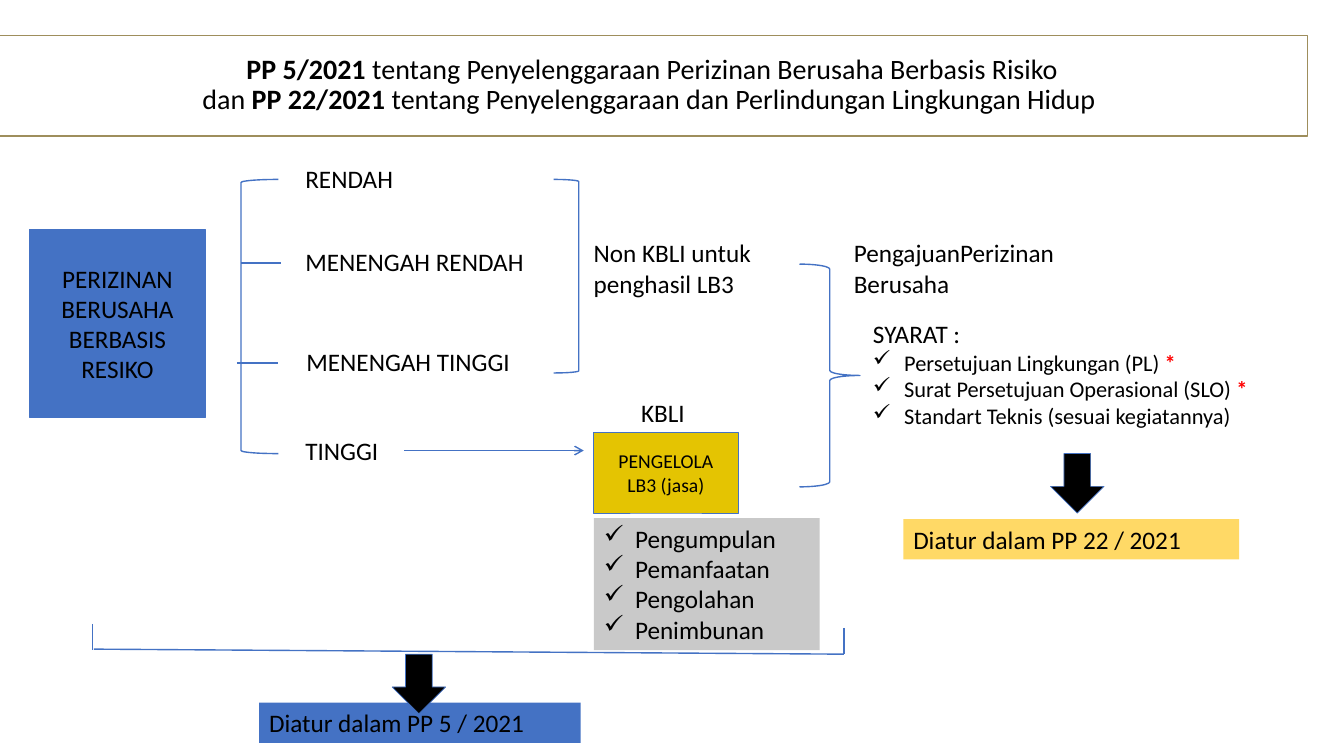
import pptx
import pptx.util
import pptx.dml.color
import pptx.enum.shapes
import pptx.enum.text
import pptx.oxml.ns
from lxml import etree

Inches = pptx.util.Inches
Pt = pptx.util.Pt
RGB = pptx.dml.color.RGBColor.from_string
SHAPE = pptx.enum.shapes.MSO_SHAPE
ALIGN = pptx.enum.text.PP_ALIGN
ANCHOR = pptx.enum.text.MSO_ANCHOR
qn = pptx.oxml.ns.qn

THEME = {
    "font": "Calibri", "title": 20, "body": 18, "list": 16, "small": 14,
    "ink": "000000", "blue": "4472C4", "red": "FF0000", "olive": "9E8E5C",
    "gold": "E4C402", "grey": "C9C9C9", "yellow": "FFD966",
}

deck = pptx.Presentation()
deck.slide_width, deck.slide_height = Inches(13.33), Inches(7.5)
page = deck.slides.add_slide(deck.slide_layouts[6])


def add_box(place, lines=(), kind=SHAPE.RECTANGLE, fill=None, line=None, weight=0.5,
            size="body", centred=False, bulleted=False):
    box = page.shapes.add_shape(kind, *map(Inches, place))
    box.shadow.inherit = False
    if fill:
        box.fill.solid()
        box.fill.fore_color.rgb = RGB(THEME[fill])
    else:
        box.fill.background()
    if line:
        box.line.color.rgb = RGB(THEME[line])
        box.line.width = Pt(weight)
    else:
        box.line.fill.background()
    frame = box.text_frame
    frame.word_wrap = True
    frame.vertical_anchor = ANCHOR.MIDDLE if centred else ANCHOR.TOP
    for index, spans in enumerate(lines):
        para = frame.paragraphs[0] if index == 0 else frame.add_paragraph()
        para.alignment = ALIGN.CENTER if centred else ALIGN.LEFT
        for text, style in spans:
            if text == "\n":
                para.add_line_break()
                continue
            span = para.add_run()
            span.text = text
            span.font.name = THEME["font"]
            span.font.size = Pt(THEME[style.get("size", size)])
            span.font.bold = style.get("bold", False)
            span.font.color.rgb = RGB(THEME[style.get("color", "ink")])
        if bulleted and text != "SYARAT :":
            settings = para._p.get_or_add_pPr()
            settings.set("marL", str(Inches(0.31)))
            settings.set("indent", str(-Inches(0.31)))
            etree.SubElement(settings, qn("a:buChar")).set("char", "✓")
    return box


def add_line(start_x, start_y, end_x, end_y, arrow=False):
    line = page.shapes.add_connector(
        pptx.enum.shapes.MSO_CONNECTOR.STRAIGHT,
        Inches(start_x), Inches(start_y), Inches(end_x), Inches(end_y))
    line.line.color.rgb = RGB(THEME["blue"])
    line.line.width = Pt(1)
    if arrow:
        etree.SubElement(line.line._get_or_add_ln(), qn("a:tailEnd")).set("type", "arrow")
    etree.SubElement(line._element.spPr, qn("a:effectLst"))


bold = {"bold": True}
star = ("*", {"bold": True, "color": "red"})

title = add_box((-0.03, 0.35, 13, 1), [[
    ("PP 5/2021 ", bold),
    ("tentang Penyelenggaraan Perizinan Berusaha Berbasis Risiko", {}),
    ("\n", {}),
    ("dan ", {}),
    ("PP 22/2021 ", bold),
    ("tentang Penyelenggaraan dan Perlindungan Lingkungan Hidup ", {}),
]], line="olive", weight=0.75, size="title", centred=True)
title.text_frame.paragraphs[0].line_spacing = 0.9

add_box((0.29, 2.28, 1.75, 1.86), [[("PERIZINAN BERUSAHA BERBASIS RESIKO", {})]],
        fill="blue", line="blue", centred=True)

for kind, place in [
    (SHAPE.LEFT_BRACKET, (2.39, 1.78, 0.37, 2.72)),
    (SHAPE.RIGHT_BRACKET, (5.49, 1.78, 0.25, 1.92)),
    (SHAPE.RIGHT_BRACE, (7.93, 2.62, 0.6, 2.21)),
]:
    add_box(place, kind=kind, line="blue", weight=1)

add_line(2.39, 2.61, 2.79, 2.61)
add_line(2.35, 3.6, 2.76, 3.6)
add_line(4.01, 4.47, 5.79, 4.47, arrow=True)

for text, place in [
    ("RENDAH", (2.93, 1.57, 1.22, 0.4)),
    ("MENENGAH RENDAH", (2.93, 2.39, 2.75, 0.4)),
    ("MENENGAH TINGGI", (2.94, 3.39, 2.58, 0.4)),
    ("TINGGI", (2.93, 4.27, 1.05, 0.4)),
    ("KBLI", (6.26, 3.89, 0.67, 0.4)),
    ("Non KBLI untuk penghasil LB3", (5.79, 2.31, 2.47, 0.71)),
    ("PengajuanPerizinan Berusaha", (8.37, 2.31, 2.96, 0.71)),
]:
    add_box(place, [[(text, {})]])

add_box((5.89, 4.29, 1.43, 0.8), [[("PENGELOLA LB3 (jasa)", {})]],
        fill="gold", line="blue", size="small", centred=True)

services = ["Pengumpulan", "Pemanfaatan", "Pengolahan", "Penimbunan"]
add_box((5.89, 5.14, 2.24, 1.31), [[(service, {})] for service in services],
        fill="grey", bulleted=True)

add_box((8.56, 3.11, 4.65, 1.21), [
    [("SYARAT :", {"size": "body"})],
    [("Persetujuan Lingkungan (PL) ", {}), star],
    [("Surat Persetujuan Operasional (SLO) ", {}), star],
    [("Standart Teknis (sesuai kegiatannya)", {})],
], size="list", bulleted=True)

add_line(0.93, 6.44, 8.37, 6.49)
add_line(0.92, 6.19, 0.92, 6.45)
add_line(8.37, 6.23, 8.37, 6.49)

for text, place, fill, arrow_left, arrow_top in [
    ("Diatur dalam PP 22 / 2021", (8.96, 5.15, 3.33, 0.4), "yellow", 10.42, 4.5),
    ("Diatur dalam PP 5 / 2021", (2.57, 6.97, 3.19, 0.4), "blue", 3.89, 6.49),
]:
    add_box(place, [[(text, {})]], fill=fill)
    add_box((arrow_left, arrow_top, 0.53, 0.59), kind=SHAPE.DOWN_ARROW, fill="ink", line="blue")

deck.save("out.pptx")
